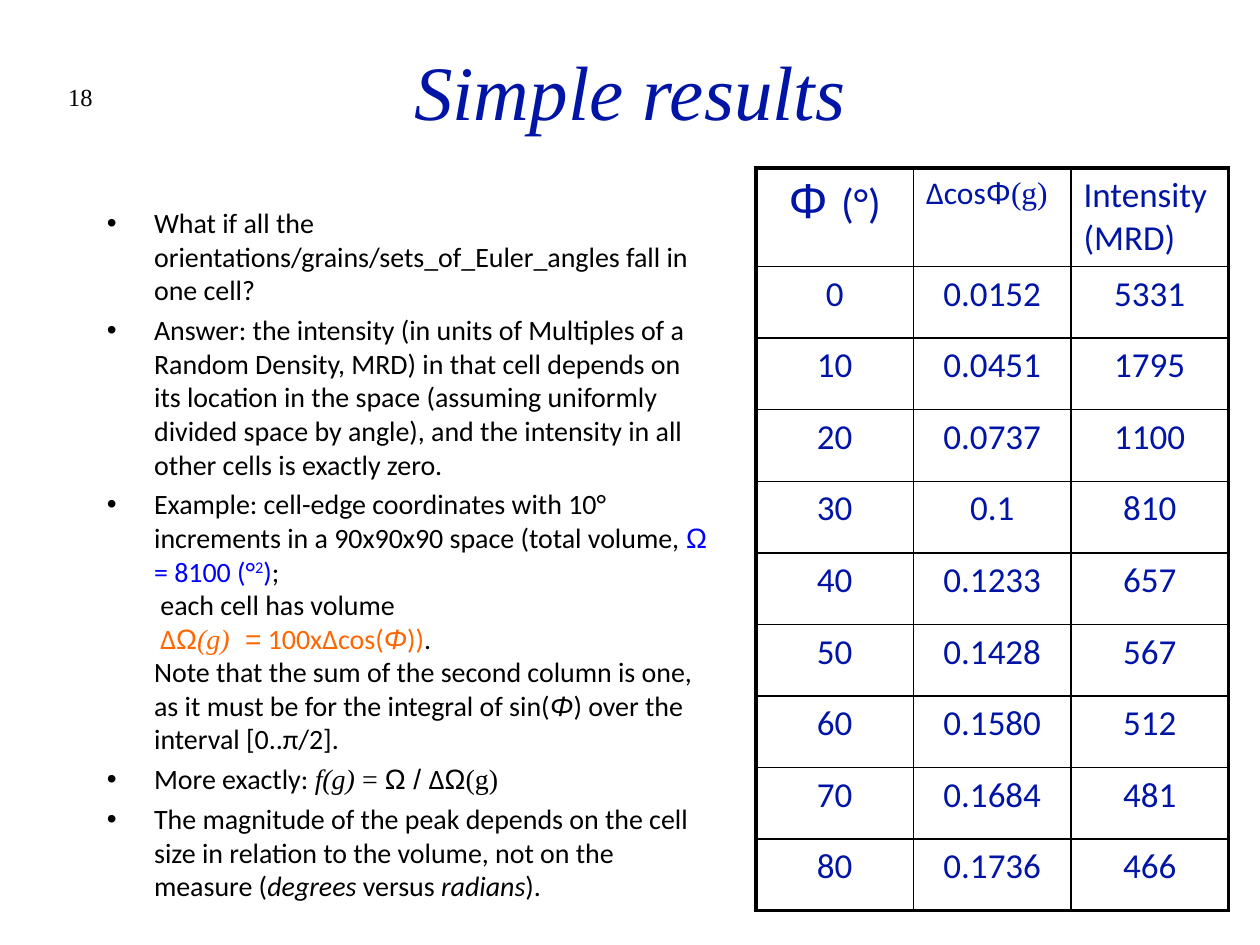
from copy import deepcopy

from lxml.etree import SubElement
from pptx import Presentation
from pptx.dml.color import RGBColor
from pptx.enum.text import MSO_ANCHOR as Anchor, PP_ALIGN as Align
from pptx.oxml import parse_xml
from pptx.oxml.ns import nsdecls, qn
from pptx.util import Pt

NAVY, BLACK, BLUE, ORANGE = "0015A5", "000000", "0000FF", "FF6600"
SANS, GREEK, SERIF = "Calibri", "Arial", "Times New Roman"


def color(code):
    return RGBColor.from_string(code)


class SlideBuilder:
    outer_border = 2.25
    inner_border = 1
    bullet_indent = 27

    def __init__(self, slide):
        self.slide = slide

    def run(self, paragraph, text, size, font=SANS, ink=BLACK, italic=False, raised=False):
        for number, line in enumerate(text.split("\n")):
            if number:
                paragraph.add_line_break()
                paragraph._p[-1].append(deepcopy(paragraph.runs[-1]._r.rPr))
            if line:
                run = paragraph.add_run()
                run.text = line
                run.font.size = Pt(size)
                run.font.name = font
                run.font.italic = italic
                run.font.color.rgb = color(ink)
                if raised:
                    run._r.rPr.set("baseline", "30000")

    def text_box(self, left, top, width, height, anchor=Anchor.TOP):
        frame = self.slide.shapes.add_textbox(Pt(left), Pt(top), Pt(width), Pt(height)).text_frame
        frame.word_wrap = True
        frame.vertical_anchor = anchor
        return frame

    def line(self, box, text, align, size, ink, italic=False):
        paragraph = self.text_box(*box, Anchor.MIDDLE).paragraphs[0]
        paragraph.alignment = align
        self.run(paragraph, text, size, SERIF, ink, italic)

    def bullets(self, box, items, size):
        frame = self.text_box(*box)
        for number, pieces in enumerate(items):
            paragraph = frame.add_paragraph() if number else frame.paragraphs[0]
            paragraph.space_before = Pt(3.6)
            properties = paragraph._p.get_or_add_pPr()
            properties.set("marL", str(Pt(self.bullet_indent)))
            properties.set("indent", str(Pt(-self.bullet_indent)))
            SubElement(properties, qn("a:buFont"), typeface=GREEK)
            SubElement(properties, qn("a:buChar"), char="•")
            for text, look in pieces:
                self.run(paragraph, text, size, **look)

    def cell(self, cell, pieces, align, outer_sides):
        paragraph = cell.text_frame.paragraphs[0]
        paragraph.alignment = align
        paragraph.space_before = Pt(4)
        for text, size, font in pieces:
            self.run(paragraph, text, size, font, NAVY)
        cell.fill.background()
        properties = cell._tc.get_or_add_tcPr()
        for place, side in enumerate("LRTB"):
            width = self.outer_border if side in outer_sides else self.inner_border
            properties.insert(place, parse_xml(
                f'<a:ln{side} {nsdecls("a")} w="{Pt(width)}"><a:solidFill>'
                f'<a:srgbClr val="{BLACK}"/></a:solidFill></a:ln{side}>'))

    def table(self, left, top, column_width, heights, rows):
        last_row, last_column = len(rows) - 1, len(rows[0]) - 1
        table = self.slide.shapes.add_table(
            len(rows), len(rows[0]), Pt(left), Pt(top),
            Pt(column_width * len(rows[0])), Pt(sum(heights))).table
        table.first_row = table.horz_banding = False
        for column in table.columns:
            column.width = Pt(column_width)
        for r, row in enumerate(rows):
            table.rows[r].height = Pt(heights[r])
            for c, pieces in enumerate(row):
                edges = {"L": c == 0, "R": c == last_column, "T": r == 0, "B": r == last_row}
                align = Align.CENTER if r or c == 0 else Align.LEFT
                self.cell(table.cell(r, c), pieces, align, [s for s in edges if edges[s]])


plain = {}
italic = {"italic": True}
greek = {"font": GREEK}
greek_italic = {"font": GREEK, "italic": True}
serif = {"font": SERIF}
serif_italic = {"font": SERIF, "italic": True}
blue = {"ink": BLUE}
orange = {"ink": ORANGE}

POINTS = [
    [("What if all the orientations/grains/sets_of_Euler_angles fall in one cell?", plain)],
    [("Answer: the intensity (in units of Multiples of a Random Density, MRD) in that cell "
      "depends on its location in the space (assuming uniformly divided space by angle), "
      "and the intensity in all other cells is exactly zero.", plain)],
    [("Example: cell-edge coordinates with 10° increments in a 90x90x90 space "
      "(total volume, ", plain),
     ("Ω", greek | blue), (" = 8100 (°", blue), ("2", blue | {"raised": True}), (")", blue),
     (";\n each cell has volume \n", plain),
     (" ∆", orange), ("Ω", greek | orange), ("(g)", serif_italic | orange),
     ("  =", greek | orange), (" 100x∆cos(", orange), ("Φ", greek_italic | orange),
     ("))", orange),
     (".  \nNote that the sum of the second column is one, "
      "as it must be for the integral of sin(", plain),
     ("Φ", greek_italic), (") over the interval [0..π/2].", plain)],
    [("More exactly: ", plain), ("f(g)", serif_italic), (" = ", serif), ("Ω / ", greek),
     ("∆", plain), ("Ω", greek), ("(g)", serif)],
    [("The magnitude of the peak depends on the cell size in relation to the volume, "
      "not on the measure (", plain),
     ("degrees ", italic), ("versus ", plain), ("radians", italic), (").", plain)],
]

HEADINGS = [
    [("Φ ", 28, GREEK), ("(°)", 24, SANS)],
    [("∆cos", 18, SANS), ("Φ", 18, GREEK), ("(g)", 18, SERIF)],
    [("Intensity (MRD)", 20, SANS)],
]

RESULTS = [
    ("0", "0.0152", "5331"),
    ("10", "0.0451", "1795"),
    ("20", "0.0737", "1100"),
    ("30", "0.1", "810"),
    ("40", "0.1233", "657"),
    ("50", "0.1428", "567"),
    ("60", "0.1580", "512"),
    ("70", "0.1684", "481"),
    ("80", "0.1736", "466"),
]


def main():
    deck = Presentation()
    deck.slide_width, deck.slide_height = Pt(720), Pt(540)
    builder = SlideBuilder(deck.slides.add_slide(deck.slide_layouts[6]))
    builder.line((18, 37, 42, 36), "18", Align.RIGHT, 14, BLACK)
    builder.line((54, 6, 612, 90), "Simple results", Align.CENTER, 44, NAVY, italic=True)
    builder.bullets((54, 114, 360, 396), POINTS, 16)
    values = [[[(value, 20, SANS)] for value in row] for row in RESULTS]
    heights = [56.4] + [40.9] * len(values)
    builder.table(432, 96, 90, heights, [HEADINGS] + values)
    deck.save("out.pptx")


if __name__ == "__main__":
    main()
